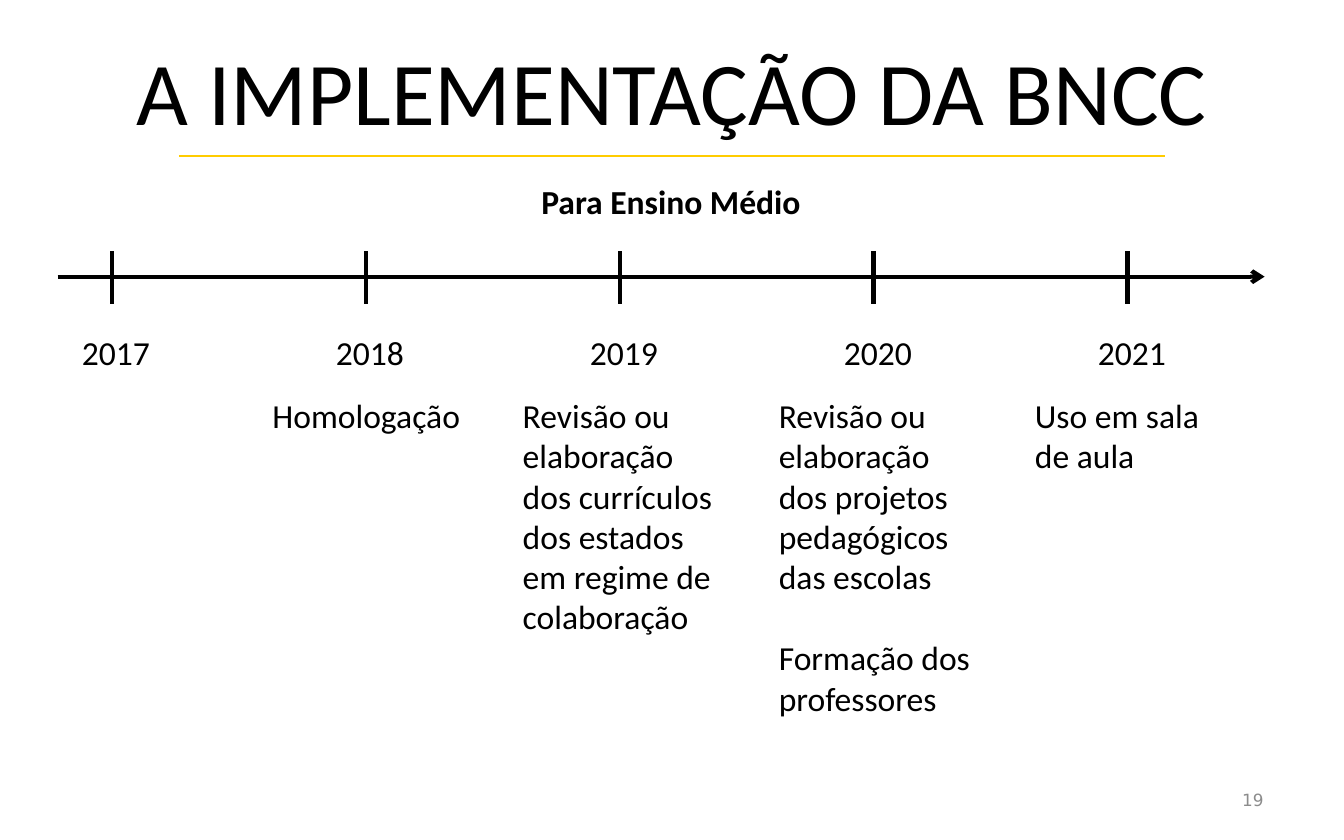
from lxml.etree import SubElement
from pptx import Presentation
from pptx.dml.color import RGBColor
from pptx.enum.shapes import MSO_CONNECTOR
from pptx.enum.text import MSO_ANCHOR, MSO_AUTO_SIZE, PP_ALIGN
from pptx.oxml.ns import qn
from pptx.util import Cm, Pt


def color(code):
    """Turn a hex string into a colour."""
    return RGBColor.from_string(code)


class Board:
    """Hold the style and the current slide."""

    face = "Calibri"
    ink = "000000"
    gold = "FFCC00"
    gray = "8C8C8C"
    size = 18
    stroke = 2.25

    def __init__(self, slide):
        """Keep the slide to draw on."""
        self.slide = slide

    def words(self, para, text, size=None, ink=None, face=None, bold=False):
        """Add one styled run to a paragraph."""
        run = para.add_run()
        run.text = text
        run.font.size = Pt(size or self.size)
        run.font.name = face or self.face
        run.font.bold = bold
        run.font.color.rgb = color(ink or self.ink)

    def title(self, text, x, y, w, h):
        """Place and fill the title."""
        shape = self.slide.shapes.title
        shape.left, shape.top, shape.width, shape.height = Cm(x), Cm(y), Cm(w), Cm(h)
        frame = shape.text_frame
        frame.vertical_anchor = MSO_ANCHOR.MIDDLE
        para = frame.paragraphs[0]
        para.alignment = PP_ALIGN.CENTER
        self.words(para, text, 48)

    def text(self, parts, x, y, w, h, wrap=True, align=PP_ALIGN.LEFT,
             grow=True, home=None, **style):
        """Add a text box with one paragraph per part."""
        box = (home or self.slide).shapes.add_textbox(Cm(x), Cm(y), Cm(w), Cm(h))
        frame = box.text_frame
        frame.word_wrap = wrap
        if grow:
            frame.auto_size = MSO_AUTO_SIZE.SHAPE_TO_FIT_TEXT
        else:
            frame.vertical_anchor = MSO_ANCHOR.MIDDLE
        for i, part in enumerate(parts):
            para = frame.add_paragraph() if i else frame.paragraphs[0]
            para.alignment = align
            if i:
                para.space_before = Pt(22)
            self.words(para, part, **style)

    def line(self, x1, y1, x2, y2, ink=None, width=None, arrow=False, home=None):
        """Add a straight line, with an arrowhead if asked."""
        line = (home or self.slide).shapes.add_connector(
            MSO_CONNECTOR.STRAIGHT, Cm(x1), Cm(y1), Cm(x2), Cm(y2))
        line.line.color.rgb = color(ink or self.ink)
        line.line.width = Pt(width or self.stroke)
        props = line._element.spPr
        if arrow:
            SubElement(props.find(qn("a:ln")), qn("a:tailEnd"), type="arrow")
        SubElement(props, qn("a:effectLst"))

    def year(self, label, x):
        """Add a tick with its year as one group."""
        group = self.slide.shapes.add_group_shape()
        self.line(x, 4.75, x, 5.74, home=group)
        self.text([label], x - 0.81, 6.15, 1.8, 1.02, wrap=False, home=group)


def main():
    """Build the slide and save it."""
    deck = Presentation()
    deck.slide_width, deck.slide_height = Cm(25.4), Cm(15.88)
    board = Board(deck.slides.add_slide(deck.slide_layouts[5]))

    board.title("A IMPLEMENTAÇÃO DA BNCC", 1.27, 0.38, 22.86, 2.64)
    board.text(["19"], 18.21, 14.71, 5.92, 0.84, align=PP_ALIGN.RIGHT,
               grow=False, size=9, ink=board.gray, face="DejaVu Sans")
    board.line(3.38, 2.95, 22.02, 2.95, board.gold, 1)
    board.line(1.09, 5.23, 23.9, 5.23, arrow=True)
    for i in range(5):
        board.year(str(2017 + i), 2.11 + 4.8 * i)

    board.text(["Homologação"], 4.9, 7.34, 4.09, 1.02, wrap=False)
    steps = [
        (["Revisão ou elaboração dos currículos dos estados em regime de colaboração"], 4.88),
        (["Revisão ou elaboração dos projetos pedagógicos das escolas",
          "Formação dos professores"], 6.4),
        (["Uso em sala de aula"], 1.8),
    ]
    for i, (parts, high) in enumerate(steps):
        board.text(parts, 9.63 + 4.84 * i, 7.34, 4.19, high)
    board.text(["Para Ensino Médio"], 9.98, 3.3, 5.46, 1.02, wrap=False, bold=True)

    deck.save("out.pptx")


if __name__ == "__main__":
    main()
